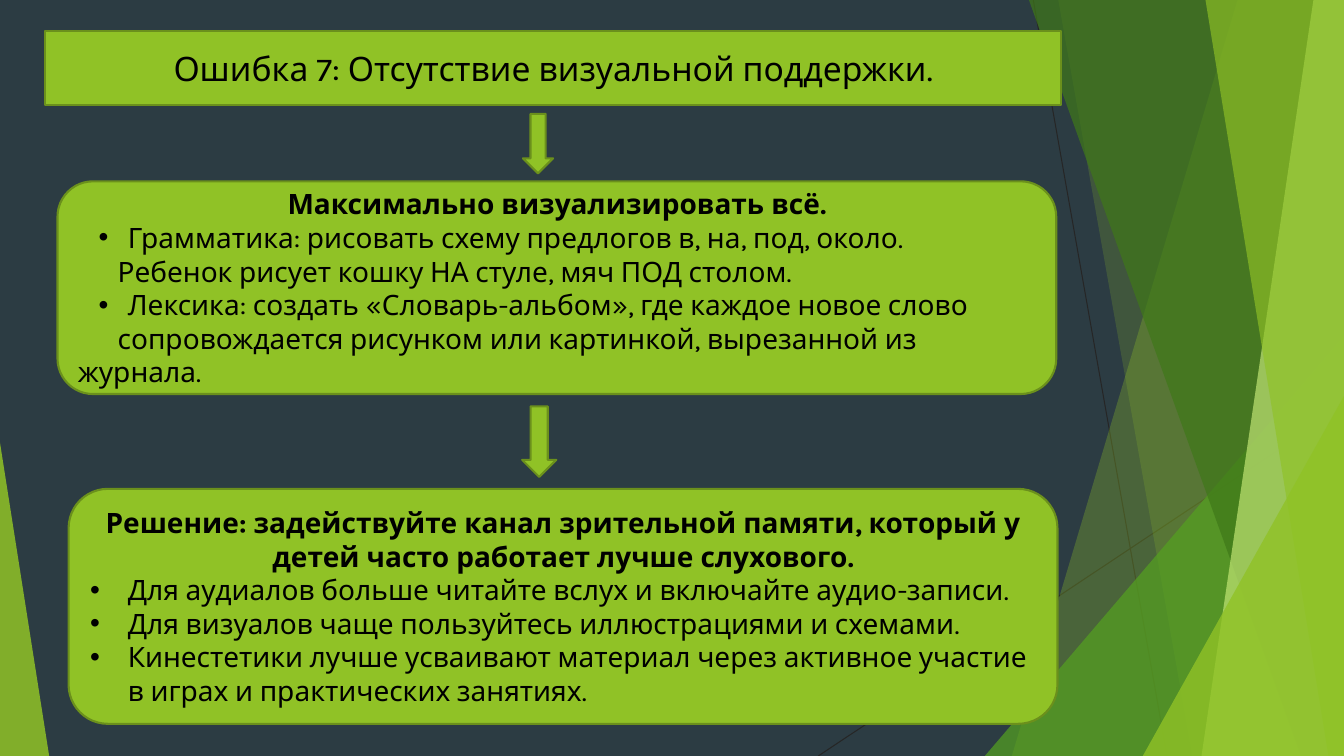
from dataclasses import dataclass

from lxml import etree
from pptx import Presentation
from pptx.dml.color import RGBColor
from pptx.enum.shapes import MSO_CONNECTOR, MSO_SHAPE
from pptx.enum.text import MSO_ANCHOR, MSO_AUTO_SIZE, PP_ALIGN
from pptx.oxml.ns import qn
from pptx.util import Cm, Pt

TRIANGLE = MSO_SHAPE.ISOSCELES_TRIANGLE
DOWN_ARROW = MSO_SHAPE.DOWN_ARROW
STRAIGHT = MSO_CONNECTOR.STRAIGHT
MIDDLE = MSO_ANCHOR.MIDDLE
NO_FIT = MSO_AUTO_SIZE.NONE
CENTER = PP_ALIGN.CENTER
LEFT = PP_ALIGN.LEFT

WIDTH, HEIGHT = 33.87, 19.05
TWO_CONTENT = 3


@dataclass(frozen=True)
class Theme:
    background: str = "2C3C43"
    lime: str = "90C226"
    green: str = "54A021"
    forest: str = "3F7819"
    pale: str = "C0E474"
    outline: str = "6B901C"
    ray: str = "262626"
    text: str = "000000"
    font: str = "Karla"
    title_size: int = 24
    body_size: int = 20
    outline_width: float = 1.5
    ray_width: float = 0.75


THEME = Theme()


@dataclass(frozen=True)
class Line:
    text: str
    bold: bool = False
    align: PP_ALIGN = LEFT
    margin: float = 0
    indent: float = 0
    bullet: bool = False


VISUALIZE = [
    Line("Максимально визуализировать всё.", bold=True, align=CENTER),
    Line("Грамматика: рисовать схему предлогов в, на, под, около.",
         margin=1.26, indent=-0.74, bullet=True),
    Line("Ребенок рисует кошку НА стуле, мяч ПОД столом.", indent=1),
    Line("Лексика: создать «Словарь-альбом», где каждое новое слово",
         margin=1.26, indent=-0.74, bullet=True),
    Line("сопровождается рисунком или картинкой, вырезанной из журнала.", indent=1),
]

SOLUTION = [
    Line("Решение: задействуйте канал зрительной памяти, который у детей "
         "часто работает лучше слухового.", bold=True, align=CENTER),
] + [
    Line(text, margin=0.95, indent=-0.95, bullet=True)
    for text in (
        "Для аудиалов больше читайте вслух и включайте аудио-записи.",
        "Для визуалов чаще пользуйтесь иллюстрациями и схемами.",
        "Кинестетики лучше усваивают материал через активное участие "
        "в играх и практических занятиях.",
    )
]


def paint(shape, color, opacity=100):
    shape.fill.solid()
    shape.fill.fore_color.rgb = RGBColor.from_string(color)
    if opacity < 100:
        tint = shape.fill._xPr.find(qn("a:solidFill"))[0]
        etree.SubElement(tint, qn("a:alpha"), val=str(opacity * 1000))


def outline(shape):
    shape.line.color.rgb = RGBColor.from_string(THEME.outline)
    shape.line.width = Pt(THEME.outline_width)


def add_ray(page, start, end):
    ray = page.shapes.add_connector(STRAIGHT, *map(Cm, start + end))
    ray.line.color.rgb = RGBColor.from_string(THEME.ray)
    ray.line.width = Pt(THEME.ray_width)
    etree.SubElement(ray._element.spPr, qn("a:effectLst"))


def add_shard(page, top, bottom, color, opacity):
    builder = page.shapes.build_freeform(Cm(top), Cm(0))
    corners = [(WIDTH, 0), (WIDTH, HEIGHT), (bottom, HEIGHT)]
    builder.add_line_segments([(Cm(x), Cm(y)) for x, y in corners], close=True)
    shard = builder.convert_to_shape()
    shard.shadow.inherit = False
    paint(shard, color, opacity)
    shard.line.fill.background()


def add_corner(page, left, top, width, apex, color, opacity):
    corner = page.shapes.add_shape(
        TRIANGLE, Cm(left), Cm(top), Cm(width), Cm(HEIGHT - top))
    corner.adjustments[0] = apex
    corner.shadow.inherit = False
    paint(corner, color, opacity)
    corner.line.fill.background()


def add_arrow(page, left, top, width, height):
    arrow = page.shapes.add_shape(DOWN_ARROW, Cm(left), Cm(top), Cm(width), Cm(height))
    arrow.shadow.inherit = False
    paint(arrow, THEME.lime)
    outline(arrow)


def write_line(para, line, size):
    para.alignment = line.align
    para.space_before = Pt(0)
    properties = para._p.get_or_add_pPr()
    properties.set("marL", str(Cm(line.margin)))
    properties.set("indent", str(Cm(line.indent)))
    if line.bullet:
        etree.SubElement(properties, qn("a:buFont"), typeface="Arial")
        etree.SubElement(properties, qn("a:buChar"), char="•")
    else:
        etree.SubElement(properties, qn("a:buNone"))
    span = para.add_run()
    span.text = line.text
    span.font.name = THEME.font
    span.font.size = Pt(size)
    span.font.bold = line.bold
    span.font.color.rgb = RGBColor.from_string(THEME.text)


def fill_box(box, left, top, width, height, lines, size):
    box.left, box.top, box.width, box.height = map(Cm, (left, top, width, height))
    geometry = etree.SubElement(box._element.spPr, qn("a:prstGeom"), prst="roundRect")
    etree.SubElement(geometry, qn("a:avLst"))
    paint(box, THEME.lime)
    outline(box)
    frame = box.text_frame
    frame.word_wrap = True
    frame.auto_size = NO_FIT
    frame.vertical_anchor = MIDDLE
    for index, line in enumerate(lines):
        para = frame.add_paragraph() if index else frame.paragraphs[0]
        write_line(para, line, size)
    box._element.getparent().append(box._element)


def add_facets(page):
    add_ray(page, (26.04, 0), (29.41, HEIGHT))
    add_ray(page, (WIDTH, 10.24), (20.62, HEIGHT))
    add_shard(page, 31.19, 25.5, THEME.lime, 30)
    add_shard(page, 26.67, 30.05, THEME.lime, 20)
    add_corner(page, 24.82, 8.46, 9.05, 1, THEME.green, 72)
    add_shard(page, 25.93, 32.79, THEME.forest, 70)
    add_shard(page, 33.1, 30.28, THEME.pale, 70)
    add_shard(page, 30.38, 33.48, THEME.lime, 65)
    add_corner(page, 28.8, 9.98, 5.07, 1, THEME.lime, 80)
    add_corner(page, 0, 11.15, 1.24, 0, THEME.lime, 85)


def main():
    deck = Presentation()
    deck.slide_width, deck.slide_height = Cm(WIDTH), Cm(HEIGHT)
    page = deck.slides.add_slide(deck.slide_layouts[TWO_CONTENT])
    page.background.fill.solid()
    page.background.fill.fore_color.rgb = RGBColor.from_string(THEME.background)
    title, advice, solution = page.placeholders

    add_facets(page)
    heading = Line("Ошибка 7: Отсутствие визуальной поддержки.", align=CENTER)
    fill_box(title, 1.14, 0.79, 25.6, 1.85, [heading], THEME.title_size)
    add_arrow(page, 13.18, 2.87, 0.76, 1.5)
    fill_box(advice, 1.45, 4.57, 25.17, 5.36, VISUALIZE, THEME.body_size)
    add_arrow(page, 13.16, 10.24, 0.86, 1.78)
    fill_box(solution, 1.73, 12.32, 24.92, 5.92, SOLUTION, THEME.body_size)
    deck.save("out.pptx")


if __name__ == "__main__":
    main()
